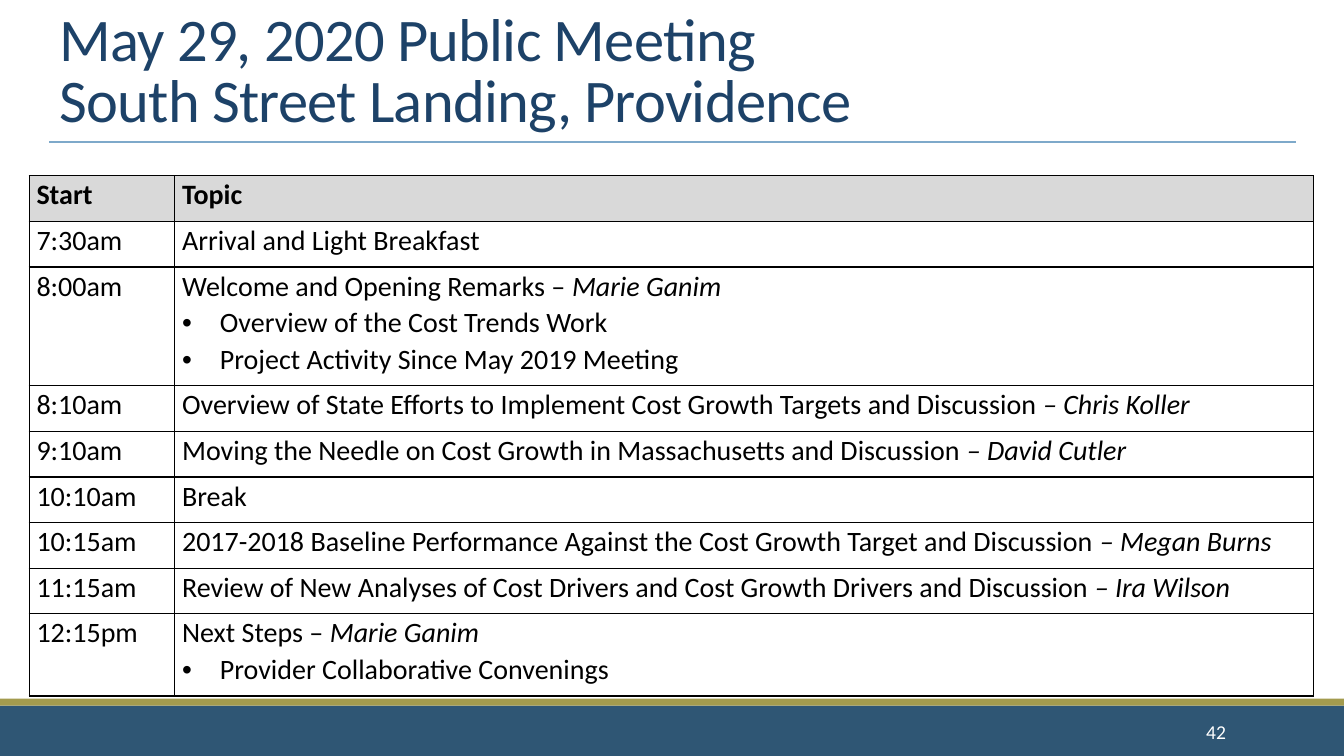
from pptx import Presentation
from pptx.dml.color import RGBColor
from pptx.enum.shapes import MSO_SHAPE, MSO_CONNECTOR
from pptx.enum.text import MSO_ANCHOR, PP_ALIGN
from pptx.oxml import parse_xml
from pptx.oxml.ns import nsdecls
from pptx.util import Pt
from lxml.etree import SubElement

TITLE = ["May 29, 2020 Public Meeting", "South Street Landing, Providence"]
PAGE = "42"
AGENDA = [
    ("Start", "Topic", "", []),
    ("7:30am", "Arrival and Light Breakfast", "", []),
    ("8:00am", "Welcome and Opening Remarks – ", "Marie Ganim",
     ["Overview of the Cost Trends Work", "Project Activity Since May 2019 Meeting"]),
    ("8:10am", "Overview of State Efforts to Implement Cost Growth Targets and Discussion ",
     "– Chris Koller", []),
    ("9:10am", "Moving the Needle on Cost Growth in Massachusetts and Discussion ",
     "– David Cutler", []),
    ("10:10am", "Break", "", []),
    ("10:15am", "2017-2018 Baseline Performance Against the Cost Growth Target and Discussion ",
     "– Megan Burns", []),
    ("11:15am", "Review of New Analyses of Cost Drivers and Cost Growth Drivers and Discussion ",
     "– Ira Wilson", []),
    ("12:15pm", "Next Steps – ", "Marie Ganim", ["Provider Collaborative Convenings"]),
]

NAVY = RGBColor(0x2F, 0x56, 0x74)
OLIVE = RGBColor(0xA3, 0x9B, 0x4E)
SKY = RGBColor(0x7E, 0xA9, 0xCA)
INK = RGBColor(0x1D, 0x42, 0x68)
GRAY = RGBColor(0xD9, 0xD9, 0xD9)
BLACK = RGBColor(0, 0, 0)
WHITE = RGBColor(0xFF, 0xFF, 0xFF)

WIDE, HIGH = 960, 540
BANDS = [(504, 36, NAVY), (499, 5, OLIVE)]
COLS = [104, 813.6]
LINE, PAD = 26.1, 6.5
INDENT = 27
HEAD = {"name": "Calibri", "size": Pt(43.2)}
BODY = {"name": "Calibri", "size": Pt(20)}
FOOT = {"name": "Calibri", "size": Pt(14)}
CELL = {"margin_left": Pt(5.2), "margin_top": Pt(0),
        "margin_right": Pt(5.2), "margin_bottom": Pt(6.5)}


def assign(item, values):
    for name, value in values.items():
        setattr(item, name, value)


def write(para, text, style, color, **extra):
    run = para.add_run()
    run.text = text
    assign(run.font, {**style, **extra})
    run.font.color.rgb = color
    return run


def label(slide, box, anchor):
    frame = slide.shapes.add_textbox(*map(Pt, box)).text_frame
    assign(frame, {"word_wrap": True, "vertical_anchor": anchor})
    return frame.paragraphs[0]


def border(cell):
    props = cell._tc.get_or_add_tcPr()
    for spot, side in enumerate(("lnL", "lnR", "lnT", "lnB")):
        props.insert(spot, parse_xml(
            f'<a:{side} {nsdecls("a")} w="{Pt(1)}"><a:solidFill>'
            f'<a:srgbClr val="{BLACK}"/></a:solidFill></a:{side}>'))


def bullet(para):
    props = para._p.get_or_add_pPr()
    props.set("marL", str(Pt(INDENT)))
    props.set("indent", str(-Pt(INDENT)))
    ns = props.nsmap["a"]
    SubElement(props, f"{{{ns}}}buFont", typeface="Arial")
    SubElement(props, f"{{{ns}}}buChar", char="•")


deck = Presentation()
assign(deck, {"slide_width": Pt(WIDE), "slide_height": Pt(HIGH)})
slide = deck.slides.add_slide(deck.slide_layouts[6])

for top, high, color in BANDS:
    band = slide.shapes.add_shape(MSO_SHAPE.RECTANGLE, Pt(0), Pt(top), Pt(WIDE), Pt(high))
    band.shadow.inherit = False
    band.fill.solid()
    band.fill.fore_color.rgb = color
    band.line.fill.background()

rule = slide.shapes.add_connector(
    MSO_CONNECTOR.STRAIGHT, Pt(35.3), Pt(101.5), Pt(925.9), Pt(101.5))
rule.line.color.rgb = SKY
rule.line.width = Pt(1)
rule._element.spPr.append(parse_xml(f'<a:effectLst {nsdecls("a")}/>'))

para = label(slide, (35.3, 22.3, 890.6, 77.8), MSO_ANCHOR.BOTTOM)
para.line_spacing = 0.85
for spot, text in enumerate(TITLE):
    if spot:
        para.add_line_break()
    run = write(para, text, HEAD, INK)
    run._r.get_or_add_rPr().set("spc", "-50")

highs = [LINE * (1 + len(notes)) + PAD for *rest, notes in AGENDA]
table = slide.shapes.add_table(
    len(AGENDA), len(COLS), Pt(20.9), Pt(125.5), Pt(sum(COLS)), Pt(sum(highs))).table
assign(table, {"first_row": False, "horz_banding": False})
for col, wide in zip(table.columns, COLS):
    col.width = Pt(wide)

for spot, (start, topic, host, notes) in enumerate(AGENDA):
    table.rows[spot].height = Pt(highs[spot])
    bold = spot == 0
    for cell, text in zip(table.rows[spot].cells, (start, topic)):
        assign(cell, CELL)
        if bold:
            cell.fill.solid()
            cell.fill.fore_color.rgb = GRAY
        else:
            cell.fill.background()
        border(cell)
        write(cell.text_frame.paragraphs[0], text, BODY, BLACK, bold=bold)
    frame = table.cell(spot, 1).text_frame
    if host:
        write(frame.paragraphs[0], host, BODY, BLACK, italic=True)
    for note in notes:
        para = frame.add_paragraph()
        bullet(para)
        write(para, note, BODY, BLACK)
    for cell in table.rows[spot].cells:
        for para in cell.text_frame.paragraphs:
            para.line_spacing = 1.07

para = label(slide, (779.8, 508.3, 103, 28.8), MSO_ANCHOR.MIDDLE)
para.alignment = PP_ALIGN.RIGHT
write(para, PAGE, FOOT, WHITE)

deck.save("out.pptx")
